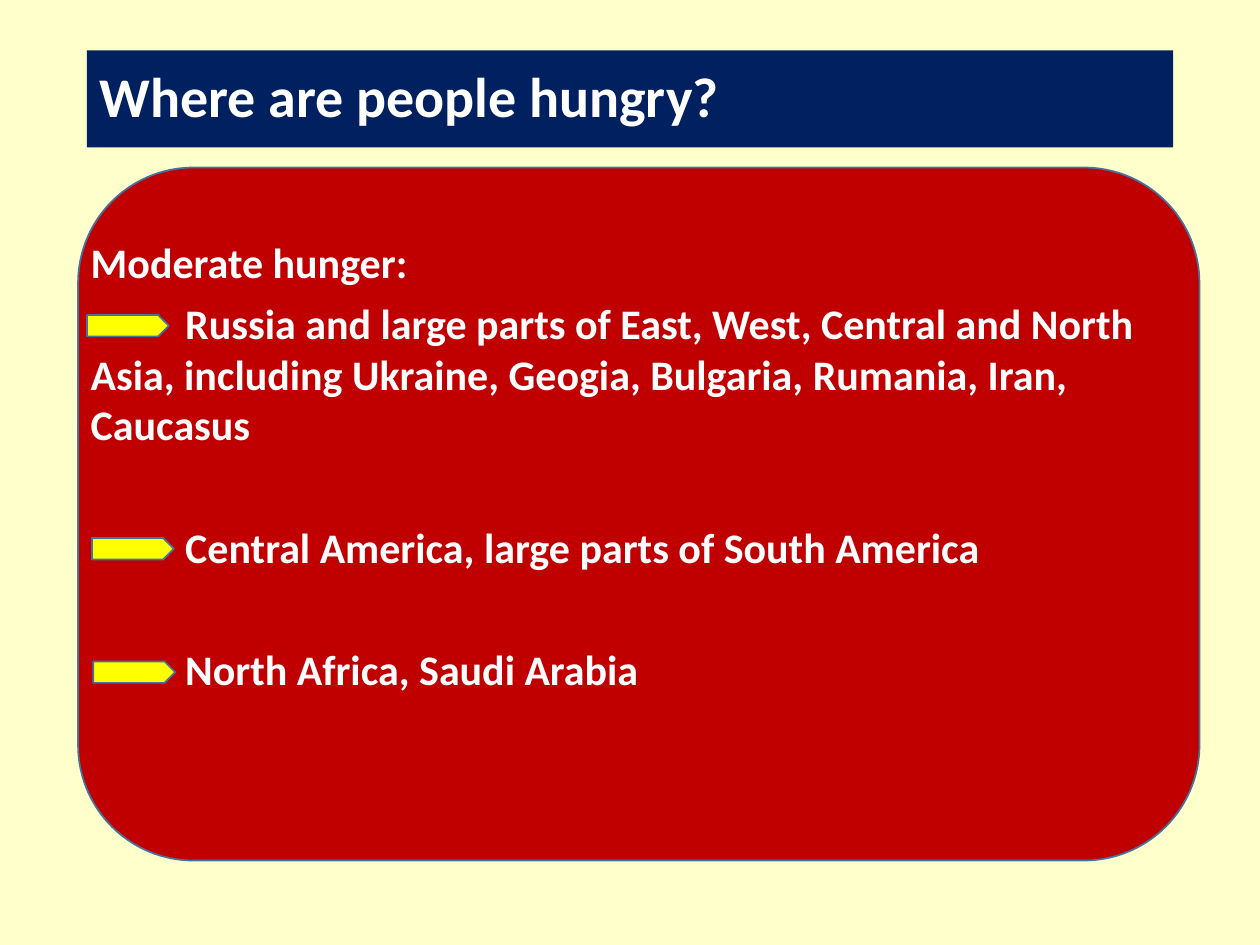
from lxml.etree import SubElement
from pptx import Presentation
from pptx.dml.color import RGBColor
from pptx.enum.shapes import MSO_SHAPE as Shape
from pptx.enum.text import MSO_ANCHOR as Anchor, MSO_AUTO_SIZE as AutoSize, PP_ALIGN as Align
from pptx.oxml.ns import qn
from pptx.util import Inches, Pt

CREAM = RGBColor(0xFF, 0xFF, 0xCC)
NAVY = RGBColor(0x00, 0x20, 0x60)
RED = RGBColor(0xC0, 0x00, 0x00)
YELLOW = RGBColor(0xFF, 0xFF, 0x00)
OUTLINE = RGBColor(0x43, 0x73, 0x9E)
WHITE = RGBColor(0xFF, 0xFF, 0xFF)

HEADING = "Moderate hunger:"
# Region text, space before it in points, and its marker's left and top
REGIONS = [
    ("Russia and large parts of East, West, Central and North "
     "Asia, including Ukraine, Geogia, Bulgaria, Rumania, Iran, Caucasus", 6, 0.69, 2.5),
    ("Central America, large parts of South America", 41.3, 0.73, 4.27),
    ("North Africa, Saudi Arabia", 41.3, 0.74, 5.25),
]
MARKER_SIZE = (0.65, 0.17)


def place(shape, left, top, width, height):
    shape.left, shape.top = Inches(left), Inches(top)
    shape.width, shape.height = Inches(width), Inches(height)


def prepare_frame(placeholder, anchor):
    frame = placeholder.text_frame
    frame.word_wrap = True
    frame.auto_size = AutoSize.NONE
    frame.vertical_anchor = anchor
    return frame


def write(paragraph, text, size=24, before=0, line_spacing=1.0, indent=0):
    """Fill a paragraph with bold white text, unbulleted; indent is for its first line."""
    paragraph.alignment = Align.LEFT
    paragraph.space_before = Pt(before)
    paragraph.line_spacing = line_spacing
    properties = paragraph._p.get_or_add_pPr()
    properties.set("marL", "0")
    properties.set("indent", str(Inches(indent)))
    SubElement(properties, qn("a:buNone"))
    run = paragraph.add_run()
    run.text = text
    font = run.font
    font.name, font.size, font.bold = "Calibri", Pt(size), True
    font.color.rgb = WHITE


def add_outlined(slide, kind, box, fill):
    shape = slide.shapes.add_shape(kind, *map(Inches, box))
    shape.shadow.inherit = False
    shape.fill.solid()
    shape.fill.fore_color.rgb = fill
    shape.line.color.rgb = OUTLINE
    shape.line.width = Pt(1)
    return shape


def fill_title(title):
    place(title, 0.69, 0.4, 8.62, 0.77)
    title.fill.solid()
    title.fill.fore_color.rgb = NAVY
    frame = prepare_frame(title, Anchor.MIDDLE)
    write(frame.paragraphs[0], "Where are people hungry?", size=32, line_spacing=0.9)


def fill_regions(body):
    place(body, 0.62, 1.83, 8.75, 5.25)
    frame = prepare_frame(body, Anchor.TOP)
    write(frame.paragraphs[0], HEADING, before=6)
    for region, before, *_ in REGIONS:
        write(frame.add_paragraph(), region, before=before, indent=0.75)


def main():
    deck = Presentation()
    deck.slide_width, deck.slide_height = Inches(10), Inches(7.5)
    slide = deck.slides.add_slide(deck.slide_layouts[1])
    slide.background.fill.solid()
    slide.background.fill.fore_color.rgb = CREAM

    fill_title(slide.shapes.title)
    panel = add_outlined(slide, Shape.ROUNDED_RECTANGLE, (0.62, 1.33, 8.9, 5.5), RED)
    body = slide.placeholders[1]
    fill_regions(body)
    panel.element.addnext(body.element)  # text lies in front of the panel
    for *_, left, top in REGIONS:
        add_outlined(slide, Shape.PENTAGON, (left, top, *MARKER_SIZE), YELLOW)

    deck.save("out.pptx")


if __name__ == "__main__":
    main()
